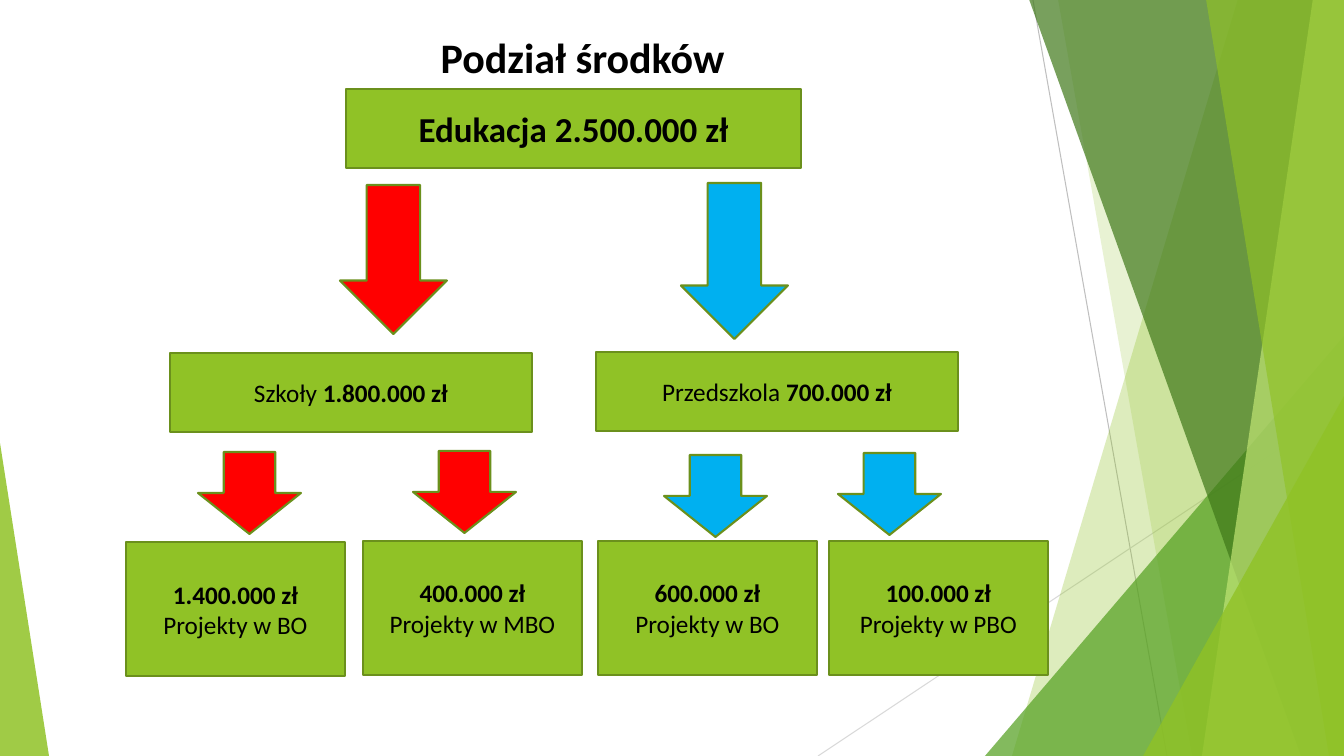
from dataclasses import dataclass

from lxml import etree
from pptx import Presentation, util as u
from pptx.dml.color import RGBColor
from pptx.enum import shapes, text
from pptx.oxml.ns import qn

PX = 12192000 / 1344
WIDTH, HEIGHT = 1344, 756
FONT = "Calibri"

BLACK = RGBColor(0x00, 0x00, 0x00)
GREEN = RGBColor(0x90, 0xC2, 0x26)
EDGE = RGBColor(0x6B, 0x90, 0x1C)
RED = RGBColor(0xFF, 0x00, 0x00)
BLUE = RGBColor(0x00, 0xB0, 0xF0)
LEAF = RGBColor(0x54, 0xA0, 0x21)
FOREST = RGBColor(0x3F, 0x78, 0x19)
LIME = RGBColor(0xC0, 0xE4, 0x74)
GREY = RGBColor(0xBF, 0xBF, 0xBF)
PALE_GREY = RGBColor(0xD9, 0xD9, 0xD9)


@dataclass(frozen=True)
class Ray:
    start: tuple[int, int]
    end: tuple[int, int]
    color: RGBColor


@dataclass(frozen=True)
class Band:
    top_x: int
    bottom_x: int
    color: RGBColor
    opacity: int


@dataclass(frozen=True)
class Corner:
    left: int
    top: int
    width: int
    apex: int
    color: RGBColor
    opacity: int


@dataclass(frozen=True)
class Arrow:
    left: int
    top: int
    width: int
    height: int
    color: RGBColor


@dataclass(frozen=True)
class Span:
    words: str
    bold: bool = False


@dataclass(frozen=True)
class Box:
    left: int
    top: int
    width: int
    height: int
    lines: tuple[tuple[Span, ...], ...]
    size: int = 18


RAYS = (
    Ray((1033, 0), (1167, HEIGHT), GREY),
    Ray((WIDTH, 406), (818, HEIGHT), PALE_GREY),
)

FACETS = (
    Band(1238, 1012, GREEN, 30),
    Band(1058, 1192, GREEN, 20),
    Corner(985, 336, 359, 1, LEAF, 72),
    Band(1029, 1301, FOREST, 70),
    Band(1313, 1202, LIME, 70),
    Band(1206, 1329, GREEN, 65),
    Corner(1143, 396, 201, 1, GREEN, 80),
    Corner(0, 443, 49, 0, GREEN, 85),
)

ARROWS = (
    Arrow(340, 185, 107, 149, RED),
    Arrow(681, 183, 107, 156, BLUE),
    Arrow(198, 452, 103, 82, RED),
    Arrow(413, 451, 103, 82, RED),
    Arrow(664, 455, 103, 82, BLUE),
    Arrow(838, 453, 103, 82, BLUE),
)


def group_box(left: int, top: int, name: str, amount: str) -> Box:
    return Box(left, top, 362, 79, ((Span(name), Span(amount, True)),))


def project_box(left: int, top: int, amount: str, name: str) -> Box:
    return Box(left, top, 219, 134, ((Span(amount, True),), (Span(name),)))


BOXES = (
    Box(346, 89, 455, 79, ((Span("Edukacja 2.500.000 zł", True),),), 25),
    group_box(170, 353, "Szkoły ", "1.800.000 zł"),
    group_box(596, 352, "Przedszkola ", "700.000 zł"),
    project_box(126, 542, "1.400.000 zł", "Projekty w BO"),
    project_box(363, 541, "400.000 zł", "Projekty w MBO"),
    project_box(598, 541, "600.000 zł", "Projekty w BO"),
    project_box(829, 541, "100.000 zł", "Projekty w PBO"),
)


def emu(px: int) -> u.Emu:
    return u.Emu(round(px * PX))


def add_span(para, words: str, *, size: int, bold: bool = False, color: RGBColor = BLACK) -> None:
    span = para.add_run()
    span.text = words
    span.font.name = FONT
    span.font.size = u.Pt(size)
    span.font.bold = bold
    span.font.color.rgb = color


def paint(shape, color: RGBColor, *, opacity: int = 100, edge: RGBColor | None = None) -> None:
    shape.shadow.inherit = False
    shape.fill.solid()
    shape.fill.fore_color.rgb = color
    if opacity < 100:
        tint = shape.fill._xPr.find(qn("a:solidFill"))[0]
        etree.SubElement(tint, qn("a:alpha")).set("val", str(opacity * 1000))
    if edge is None:
        shape.line.fill.background()
    else:
        shape.line.color.rgb = edge
        shape.line.width = u.Pt(1.5)


def add_preset(page, kind, left: int, top: int, width: int, height: int):
    return page.shapes.add_shape(kind, emu(left), emu(top), emu(width), emu(height))


def draw_ray(page, ray: Ray) -> None:
    line = page.shapes.add_connector(
        shapes.MSO_CONNECTOR.STRAIGHT, *map(emu, ray.start), *map(emu, ray.end)
    )
    line.line.color.rgb = ray.color
    line.line.width = u.Pt(0.75)
    etree.SubElement(line._element.spPr, qn("a:effectLst"))


def draw_band(page, band: Band) -> None:
    outline = page.shapes.build_freeform(band.top_x, -1, scale=PX)
    outline.add_line_segments([(WIDTH, -1), (WIDTH, HEIGHT), (band.bottom_x, HEIGHT)], close=True)
    paint(outline.convert_to_shape(), band.color, opacity=band.opacity)


def draw_corner(page, corner: Corner) -> None:
    shape = add_preset(
        page, shapes.MSO_SHAPE.ISOSCELES_TRIANGLE,
        corner.left, corner.top, corner.width, HEIGHT - corner.top,
    )
    shape.adjustments[0] = corner.apex
    paint(shape, corner.color, opacity=corner.opacity)


def draw_arrow(page, arrow: Arrow) -> None:
    shape = add_preset(
        page, shapes.MSO_SHAPE.DOWN_ARROW, arrow.left, arrow.top, arrow.width, arrow.height
    )
    paint(shape, arrow.color, edge=EDGE)


def draw_box(page, box: Box) -> None:
    shape = add_preset(page, shapes.MSO_SHAPE.RECTANGLE, box.left, box.top, box.width, box.height)
    paint(shape, GREEN, edge=EDGE)
    frame = shape.text_frame
    frame.word_wrap = True
    frame.vertical_anchor = text.MSO_ANCHOR.MIDDLE
    for index, line in enumerate(box.lines):
        para = frame.add_paragraph() if index else frame.paragraphs[0]
        para.alignment = text.PP_ALIGN.CENTER
        for span in line:
            add_span(para, span.words, size=box.size, bold=span.bold)


def set_title(page, words: str) -> None:
    title = page.shapes.title
    title.left, title.top, title.width, title.height = map(emu, (26, 26, 1123, 70))
    frame = title.text_frame
    frame.auto_size = text.MSO_AUTO_SIZE.NONE
    frame.vertical_anchor = text.MSO_ANCHOR.TOP
    para = frame.paragraphs[0]
    para.alignment = text.PP_ALIGN.CENTER
    add_span(para, words, size=30, bold=True)


def main() -> None:
    deck = Presentation()
    deck.slide_width, deck.slide_height = emu(WIDTH), emu(HEIGHT)
    page = deck.slides.add_slide(deck.slide_layouts[5])
    set_title(page, "Podział środków ")
    for ray in RAYS:
        draw_ray(page, ray)
    for facet in FACETS:
        if isinstance(facet, Band):
            draw_band(page, facet)
        else:
            draw_corner(page, facet)
    for arrow in ARROWS:
        draw_arrow(page, arrow)
    for box in BOXES:
        draw_box(page, box)
    deck.save("out.pptx")


if __name__ == "__main__":
    main()
